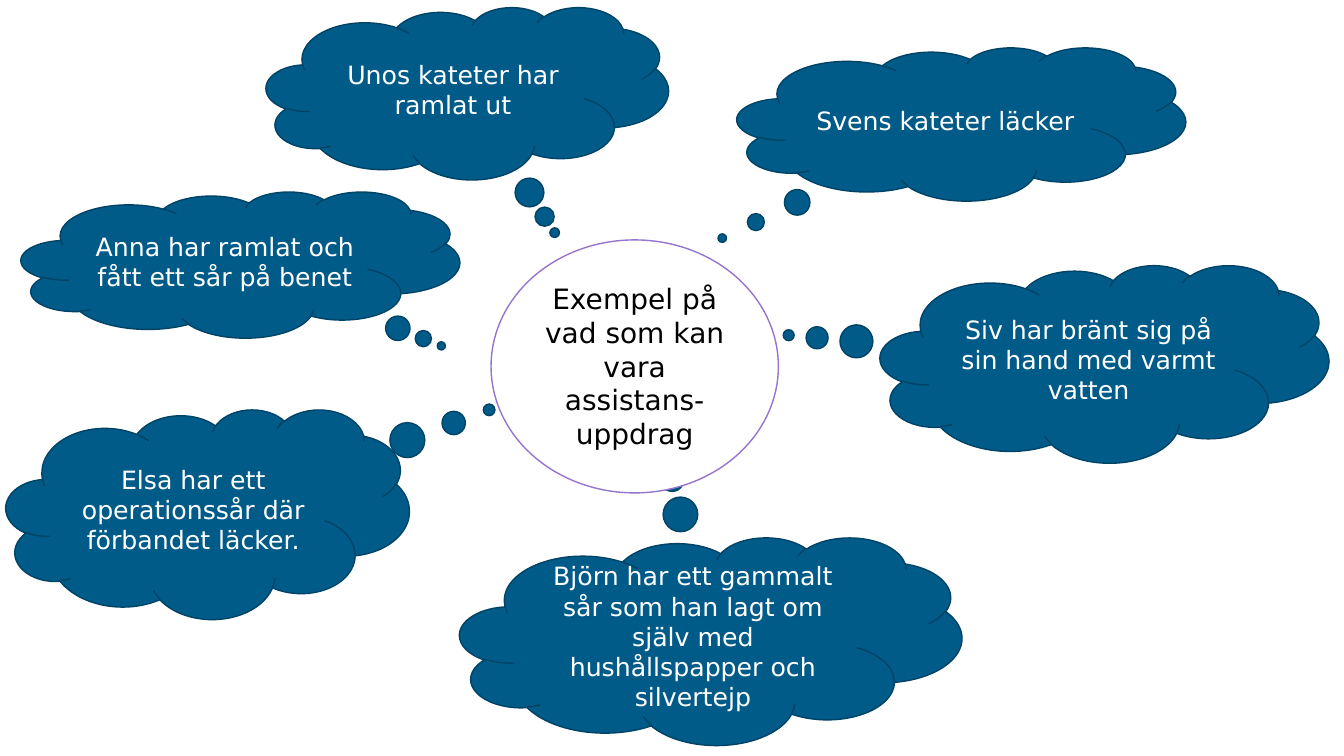
from pptx import Presentation
from pptx.dml.color import RGBColor
from pptx.enum import shapes, text
from pptx.util import Inches, Pt

BLUE = RGBColor(0x00, 0x5B, 0x89)
NAVY = RGBColor(0x00, 0x43, 0x65)
PURPLE = RGBColor(0x95, 0x75, 0xCD)
WHITE = RGBColor(0xFF, 0xFF, 0xFF)
BLACK = RGBColor(0x00, 0x00, 0x00)
FONT = "DejaVu Sans"

# Wording, box (left, top, width, height), tail tip as a share of the box from its centre
CLOUDS = [
    ("Anna har ramlat och fått ett sår på benet", (0.21, 1.9, 4.35, 1.45), (0.458, 0.556)),
    ("Unos kateter har ramlat ut", (2.64, 0.07, 3.99, 1.71), (0.217, 0.809)),
    ("Elsa har ett operationssår där förbandet läcker.", (0.06, 4.06, 4, 2.08), (0.698, -0.497)),
    ("Siv har bränt sig på sin hand med varmt vatten", (8.73, 2.63, 4.45, 1.96), (-0.704, -0.145)),
    ("Björn har ett gammalt sår som han lagt om själv med hushållspapper och silvertejp",
     (4.56, 5.33, 4.98, 2.06), (-0.088, -0.889)),
]
TOP_CLOUD = ("Svens kateter läcker", (7.31, 0.47, 4.45, 1.52), (-0.533, 0.745))
TOPIC = ("Exempel på vad som kan vara assistans-uppdrag", (4.87, 2.38, 2.85, 2.51))


def add_text(tf, words, size, color, anchor):
    tf.word_wrap = True
    tf.vertical_anchor = anchor
    p = tf.paragraphs[0]
    p.alignment = text.PP_ALIGN.CENTER
    r = p.add_run()
    r.text = words
    r.font.name, r.font.size = FONT, Pt(size)
    r.font.color.rgb = color


def add_outlined(s, kind, box, fill, line):
    sp = s.shapes.add_shape(kind, *map(Inches, box))
    sp.shadow.inherit = False
    sp.fill.solid()
    sp.fill.fore_color.rgb = fill
    sp.line.color.rgb = line
    sp.line.width = Pt(1)
    return sp


def add_cloud(s, words, box, tip):
    sp = add_outlined(s, shapes.MSO_SHAPE.CLOUD_CALLOUT, box, BLUE, NAVY)
    sp.adjustments[0], sp.adjustments[1] = tip
    add_text(sp.text_frame, words, 18, WHITE, text.MSO_ANCHOR.MIDDLE)


def add_topic(s, words, box):
    sp = add_outlined(s, shapes.MSO_SHAPE.OVAL, box, WHITE, PURPLE)
    add_text(sp.text_frame, words, 20, BLACK, text.MSO_ANCHOR.TOP)
    sp.text_frame.auto_size = text.MSO_AUTO_SIZE.SHAPE_TO_FIT_TEXT


def main():
    prs = Presentation()
    prs.slide_width, prs.slide_height = Inches(13.33), Inches(7.5)
    s = prs.slides.add_slide(prs.slide_layouts[6])

    # Thought clouds, with the topic covering the tails that reach it
    for cloud in CLOUDS:
        add_cloud(s, *cloud)
    add_topic(s, *TOPIC)
    add_cloud(s, *TOP_CLOUD)

    prs.save("out.pptx")


if __name__ == "__main__":
    main()
